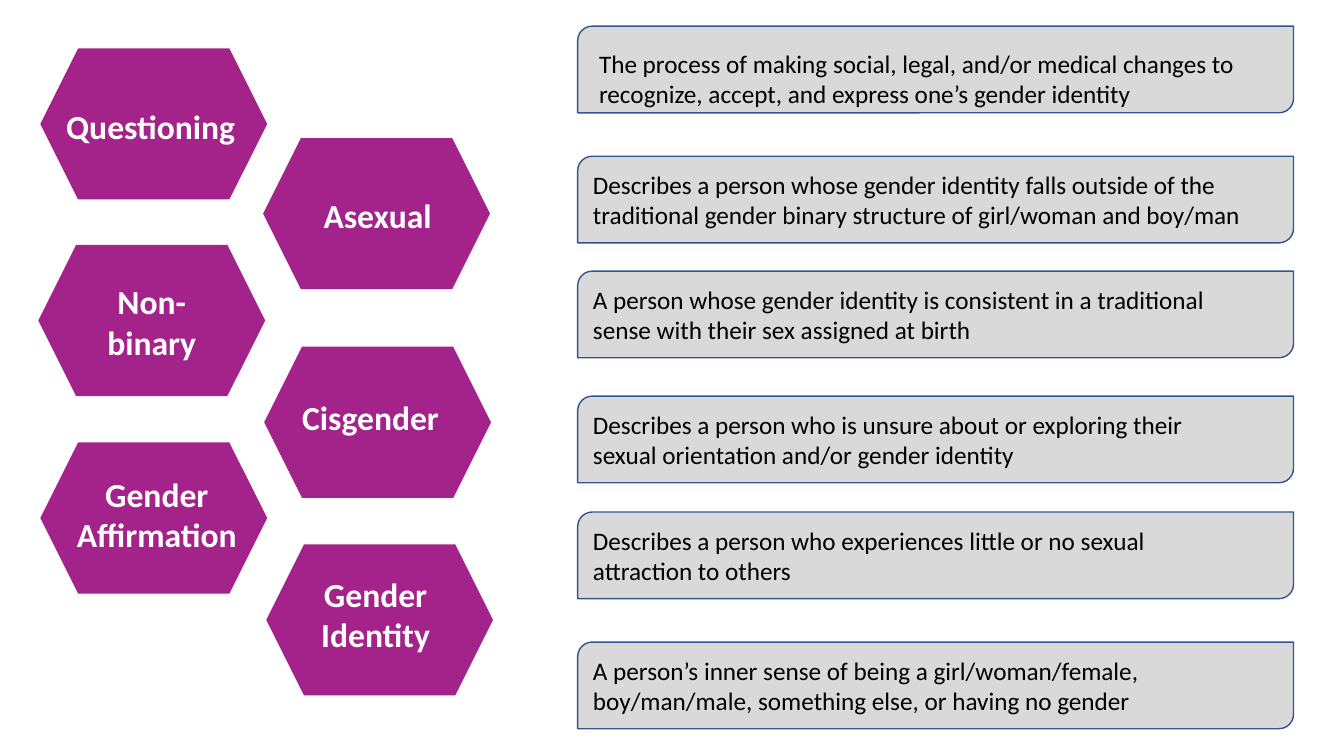
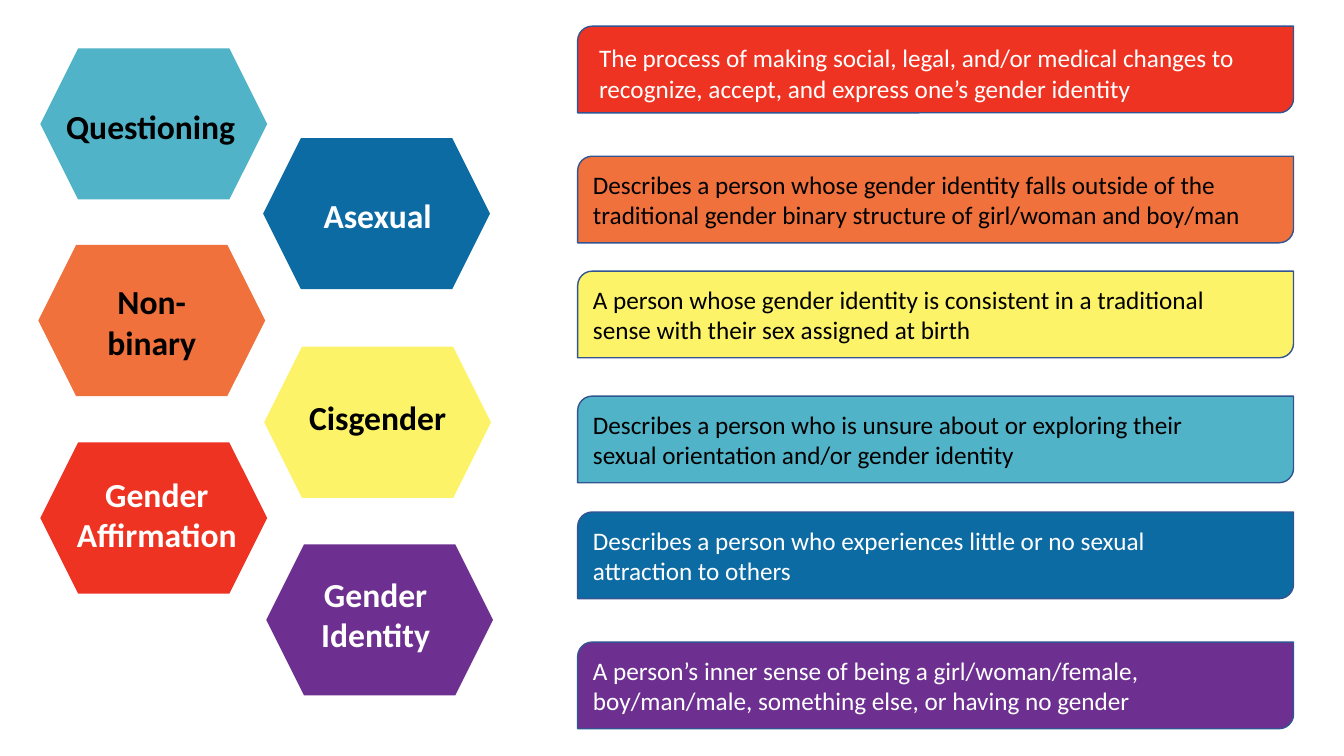
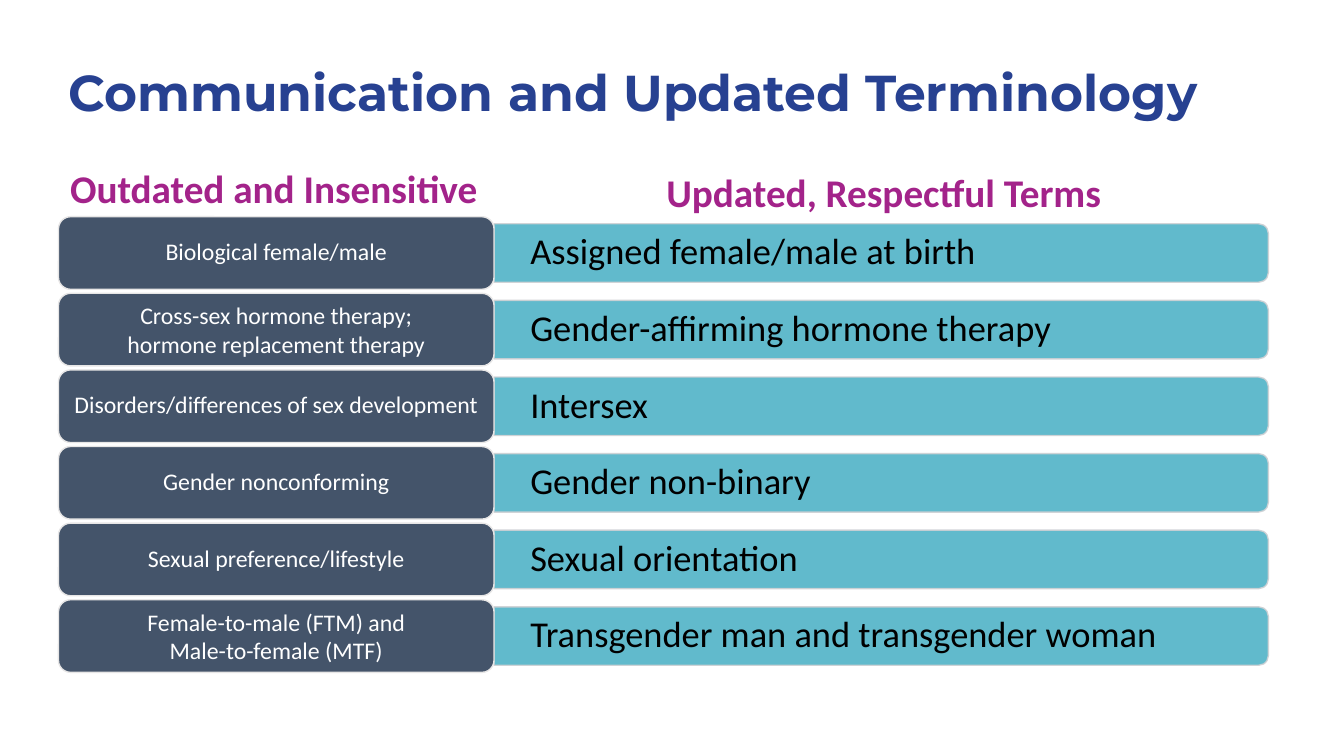
from lxml import etree
from pptx import Presentation
from pptx.dml.color import RGBColor
from pptx.enum import shapes, text
from pptx.oxml.ns import qn
from pptx.util import Inches, Pt

COLOURS = {
    "white": "FFFFFF", "black": "000000", "grey": "D9D9D9", "magenta": "A3238A",
    "red": "EF3322", "orange": "F1713D", "yellow": "FCF369", "teal": "50B3C7",
    "blue": "0D6BA3", "purple": "6D3090", "outline": "325491", "navy": "274191",
    "slate": "44546A", "pale": "E7E6E6", "silver": "CFD1D4",
}
DARK = {"magenta", "red", "blue", "purple"}
SHAPE = shapes.MSO_SHAPE
MIDDLE = text.MSO_ANCHOR.MIDDLE
TOP = text.MSO_ANCHOR.TOP
CENTER = text.PP_ALIGN.CENTER
LEFT = text.PP_ALIGN.LEFT

# term, colour in the answer key, hexagon left and top, label left and top
TERMS = [
    ("Gender\nAffirmation", "red", 0.4, 4.39, 0.43, 4.65),
    ("Asexual", "blue", 2.61, 1.37, 2.62, 1.88),
    ("Cisgender", "yellow", 2.62, 3.44, 2.55, 3.89),
    ("Gender\nIdentity", "purple", 2.64, 5.4, 2.6, 5.64),
    ("Non-\nbinary", "orange", 0.38, 2.43, 0.38, 2.74),
    ("Questioning", "teal", 0.4, 0.48, 0.37, 1),
]
# definition, colour in the answer key, card top
DEFINITIONS = [
    ("The process of making social, legal, and/or medical changes to recognize, "
     "accept, and express one’s gender identity", "red", 0.26),
    ("Describes a person whose gender identity falls outside of the traditional "
     "gender binary structure of girl/woman and boy/man", "orange", 1.55),
    ("A person whose gender identity is consistent in a traditional sense with "
     "their sex assigned at birth", "yellow", 2.69),
    ("Describes a person who is unsure about or exploring their sexual "
     "orientation and/or gender identity", "teal", 3.93),
    ("Describes a person who experiences little or no sexual attraction to others",
     "blue", 5.08),
    ("A person’s inner sense of being a girl/woman/female, boy/man/male, "
     "something else, or having no gender", "purple", 6.37),
]
REPLACEMENTS = [
    ("Biological female/male", "Assigned female/male at birth"),
    ("Cross-sex hormone therapy;\nhormone replacement therapy",
     "Gender-affirming hormone therapy"),
    ("Disorders/differences of sex development", "Intersex"),
    ("Gender nonconforming", "Gender non-binary"),
    ("Sexual preference/lifestyle", "Sexual orientation"),
    ("Female-to-male (FTM) and\nMale-to-female (MTF)",
     "Transgender man and transgender woman"),
]


def rgb(name):
    return RGBColor.from_string(COLOURS[name])


def ink_on(colour):
    return "white" if colour in DARK else "black"


def set_alpha(fill_parent, percent):
    """Make the solid fill directly under fill_parent partly transparent."""
    colour = fill_parent.find(qn("a:solidFill"))[0]
    etree.SubElement(colour, qn("a:alpha")).set("val", str(percent * 1000))


def write(shape, words, size=18, colour="black", bold=False, font="Calibri",
          align=LEFT, anchor=TOP, spacing=1.0, insets=(0.1, 0.05, 0.1, 0.05)):
    """Fill a shape with text, one paragraph per line of words."""
    frame = shape.text_frame
    frame.text = words
    frame.word_wrap = True
    frame.auto_size = text.MSO_AUTO_SIZE.NONE
    frame.vertical_anchor = anchor
    (frame.margin_left, frame.margin_top,
     frame.margin_right, frame.margin_bottom) = map(Inches, insets)
    for paragraph in frame.paragraphs:
        paragraph.alignment = align
        paragraph.line_spacing = spacing
        for run in paragraph.runs:
            run.font.name = font
            run.font.size = Pt(size)
            run.font.bold = bold
            run.font.color.rgb = rgb(colour)


class Deck:
    def __init__(self):
        self.prs = Presentation()
        self.prs.slide_width = Inches(13.33)
        self.prs.slide_height = Inches(7.5)
        self.slide = None

    def add_slide(self, title=None):
        layout = self.prs.slide_layouts[5 if title else 6]
        self.slide = self.prs.slides.add_slide(layout)
        if title:
            heading = self.slide.shapes.title
            heading.left, heading.top = Inches(0.58), Inches(0.62)
            heading.width, heading.height = Inches(11.5), Inches(1)
            write(heading, title, size=36, colour="navy", bold=True,
                  font="Montserrat", spacing=0.9)

    def shape(self, kind, left, top, width, height, fill, line=None, parent=None):
        item = (parent or self.slide).shapes.add_shape(
            kind, Inches(left), Inches(top), Inches(width), Inches(height))
        item.shadow.inherit = False
        item.fill.solid()
        item.fill.fore_color.rgb = rgb(fill)
        if line:
            item.line.color.rgb = rgb(line)
            item.line.width = Pt(1)
        else:
            item.line.fill.background()
        return item

    def label(self, words, left, top, width, height, parent=None, **style):
        box = (parent or self.slide).shapes.add_textbox(
            Inches(left), Inches(top), Inches(width), Inches(height))
        write(box, words, **style)

    def hexagon(self, term, fill, left, top, label_left, label_top):
        group = self.slide.shapes.add_group_shape()
        self.shape(SHAPE.HEXAGON, left, top, 2.25, 1.5, fill, parent=group)
        self.label(term, label_left, label_top, 2.25, 0.91 if "\n" in term else 0.5,
                   parent=group, size=24, bold=True, colour=ink_on(fill),
                   align=CENTER)

    def definition(self, words, top, fill, insets):
        card = self.shape(SHAPE.ROUND_2_DIAG_RECTANGLE, 5.73, top, 7.1, 0.86,
                          fill, line="outline")
        write(card, words, colour=ink_on(fill), anchor=MIDDLE, insets=insets)

    def replacement(self, outdated, updated, top):
        """One row: the outdated term on a card, the updated one on a bar."""
        middle = top + 0.36
        bar = self.shape(SHAPE.ROUND_2_SAME_RECTANGLE, 8.45, middle - 3.84,
                         0.58, 7.68, "teal", line="silver")
        bar.rotation = 90
        properties = bar.fill._xPr
        set_alpha(properties, 90)
        set_alpha(properties.find(qn("a:ln")), 90)
        self.label(updated, 4.9, middle - 0.26, 7.66, 0.52, size=26, anchor=MIDDLE,
                   spacing=0.9, insets=(0.36, 0.05, 0.11, 0.05))
        card = self.shape(SHAPE.ROUNDED_RECTANGLE, 0.58, top, 4.32, 0.72,
                          "slate", line="pale")
        write(card, outdated, size=17, colour="white", align=CENTER, anchor=MIDDLE,
              spacing=1.0 if "\n" in outdated else 0.9,
              insets=(0.07, 0.04, 0.07, 0.04))

    def matching(self, answers):
        """Terms and definitions; colours pair them up when answers is True."""
        self.add_slide()
        for term, colour, left, top, label_left, label_top in TERMS:
            if answers and term == "Cisgender":
                label_left = left
            self.hexagon(term, colour if answers else "magenta",
                         left, top, label_left, label_top)
        for index, (words, colour, top) in enumerate(DEFINITIONS):
            insets = (0.11, 0.04, 0.47, 0.04)
            if index == 0:
                insets = (0.17, 0.07 if answers else 0.17, 0.42, 0)
            self.definition(words, top, colour if answers else "grey", insets)

    def terminology(self):
        self.add_slide("Communication and Updated Terminology")
        for row, (outdated, updated) in enumerate(REPLACEMENTS):
            self.replacement(outdated, updated, 2.15 + 0.76 * row)
        for heading, left, top, width in (
                ("Outdated and Insensitive", 0.58, 1.58, 4.27),
                ("Updated, Respectful Terms", 4.95, 1.62, 7.63)):
            self.label(heading, left, top, width, 0.57, size=28, bold=True,
                       colour="magenta", align=CENTER)


def main():
    deck = Deck()
    deck.matching(answers=False)
    deck.matching(answers=True)
    deck.terminology()
    deck.prs.save("out.pptx")


if __name__ == "__main__":
    main()
